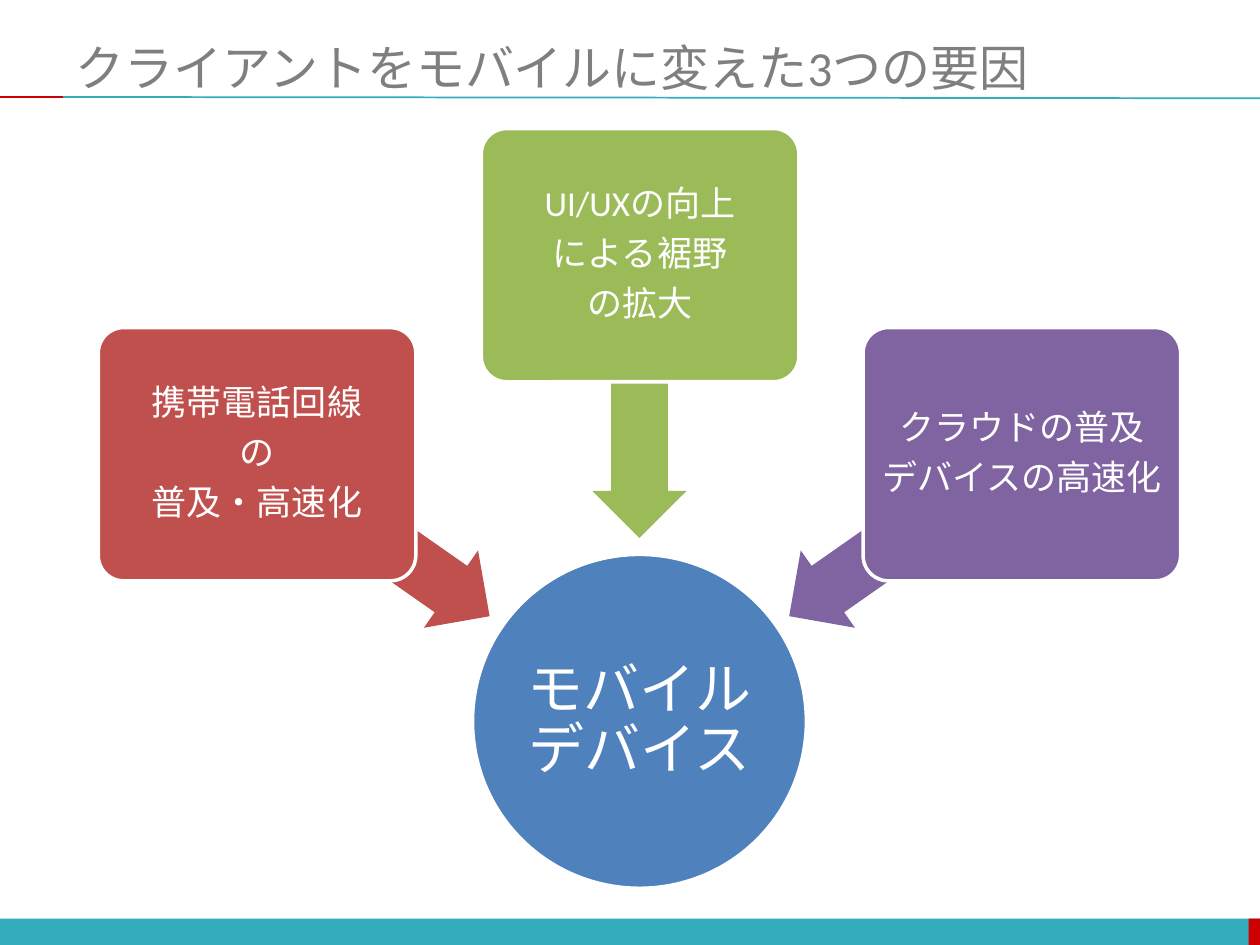
from dataclasses import dataclass

from pptx import Presentation
from pptx.dml.color import RGBColor
from pptx.enum import shapes, text
from pptx.oxml import parse_xml
from pptx.oxml.ns import nsdecls
from pptx.util import Inches, Pt


@dataclass(frozen=True)
class Theme:
    """Colours, font and type sizes of the slide."""
    font: str = "Calibri"
    teal: str = "33ACBD"
    crimson: str = "CC0000"
    grey: str = "7F7F7F"
    white: str = "FFFFFF"
    blue: str = "4F81BD"
    red: str = "C0504D"
    green: str = "9BBB59"
    purple: str = "8064A2"
    title_size: int = 28
    hub_size: int = 32
    factor_size: int = 20


@dataclass(frozen=True)
class Factor:
    """A cause, its box position and its arrow to the hub."""
    lines: tuple[str, ...]
    color: str
    left: float
    top: float
    arrow_left: float
    arrow_top: float
    rotation: float


THEME = Theme()
KIND = shapes.MSO_SHAPE
FACTORS = (
    Factor(("携帯電話回線", "の", "普及・高速化"), THEME.red, 0.78, 2.6, 1.84, 3.87, 215),
    Factor(("UI/UXの向上", "による裾野", "の拡大"), THEME.green, 3.82, 1.02, 3.95, 2.77, 270),
    Factor(("クラウドの普及", "デバイスの高速化"), THEME.purple, 6.85, 2.6, 6.06, 3.87, 325),
)


def add_block(slide, kind, left: float, top: float, width: float, height: float,
              color: str, outlined: bool = False):
    """Add a flat filled shape, with a white outline if asked."""
    block = slide.shapes.add_shape(
        kind, Inches(left), Inches(top), Inches(width), Inches(height))
    block.shadow.inherit = False
    block.fill.solid()
    block.fill.fore_color.rgb = RGBColor.from_string(color)
    if outlined:
        block.line.color.rgb = RGBColor.from_string(THEME.white)
        block.line.width = Pt(2)
    else:
        block.line.fill.background()
    return block


def add_rule(slide, start: float, end: float, end_y: float, color: str) -> None:
    """Add a thin rule under the title."""
    rule = slide.shapes.add_connector(
        shapes.MSO_CONNECTOR.STRAIGHT,
        Inches(start), Inches(0.77), Inches(end), Inches(end_y))
    rule.line.color.rgb = RGBColor.from_string(color)
    rule.line.width = Pt(1)
    rule._element.spPr.append(parse_xml(f"<a:effectLst {nsdecls('a')}/>"))


def style(paragraph, size: int, color: str) -> None:
    """Set the font of a paragraph."""
    paragraph.font.name = THEME.font
    paragraph.font.size = Pt(size)
    paragraph.font.color.rgb = RGBColor.from_string(color)


def write(block, lines: tuple[str, ...], size: int, inset: float) -> None:
    """Write centred white lines inside a shape."""
    frame = block.text_frame
    frame.word_wrap = True
    frame.vertical_anchor = text.MSO_ANCHOR.MIDDLE
    frame.margin_left = frame.margin_right = Inches(inset)
    frame.margin_top = frame.margin_bottom = Inches(inset)
    frame.text = "\n".join(lines)
    for paragraph in frame.paragraphs:
        paragraph.alignment = text.PP_ALIGN.CENTER
        paragraph.line_spacing = 0.9
        paragraph.space_after = Pt(size * 0.35)
        style(paragraph, size, THEME.white)


def add_title(slide, wording: str) -> None:
    """Place and format the slide title."""
    title = slide.shapes.title
    title.left, title.top = Inches(0.5), Inches(0.3)
    title.width, title.height = Inches(9.5), Inches(0.46)
    frame = title.text_frame
    frame.text = wording
    frame.auto_size = text.MSO_AUTO_SIZE.NONE
    frame.vertical_anchor = text.MSO_ANCHOR.MIDDLE
    frame.paragraphs[0].alignment = text.PP_ALIGN.LEFT
    style(frame.paragraphs[0], THEME.title_size, THEME.grey)


def add_factor(slide, factor: Factor) -> None:
    """Add a cause box over the tail of its arrow."""
    arrow = add_block(slide, KIND.LEFT_ARROW, factor.arrow_left, factor.arrow_top,
                      2.25, 0.75, factor.color)
    arrow.adjustments[0], arrow.adjustments[1] = 0.6, 0.5
    arrow.rotation = factor.rotation
    box = add_block(slide, KIND.ROUNDED_RECTANGLE, factor.left, factor.top,
                    2.52, 2.01, factor.color, outlined=True)
    box.adjustments[0] = 0.1
    write(box, factor.lines, THEME.factor_size, 0.04)


def main() -> None:
    """Build and save the slide."""
    deck = Presentation()
    deck.slide_width, deck.slide_height = Inches(10), Inches(7.5)
    slide = deck.slides.add_slide(deck.slide_layouts[5])
    add_block(slide, KIND.RECTANGLE, 0, 7.29, 10, 0.22, THEME.teal)
    add_block(slide, KIND.RECTANGLE, 9.91, 7.29, 0.1, 0.22, THEME.crimson)
    add_rule(slide, 0.5, 10, 0.78, THEME.teal)
    add_rule(slide, 0, 0.5, 0.77, THEME.crimson)
    add_title(slide, "クライアントをモバイルに変えた3つの要因")
    hub = add_block(slide, KIND.OVAL, 3.75, 4.4, 2.65, 2.65, THEME.blue, outlined=True)
    write(hub, ("モバイルデバイス",), THEME.hub_size, 0.02)
    for factor in FACTORS:
        add_factor(slide, factor)
    deck.save("out.pptx")


if __name__ == "__main__":
    main()
